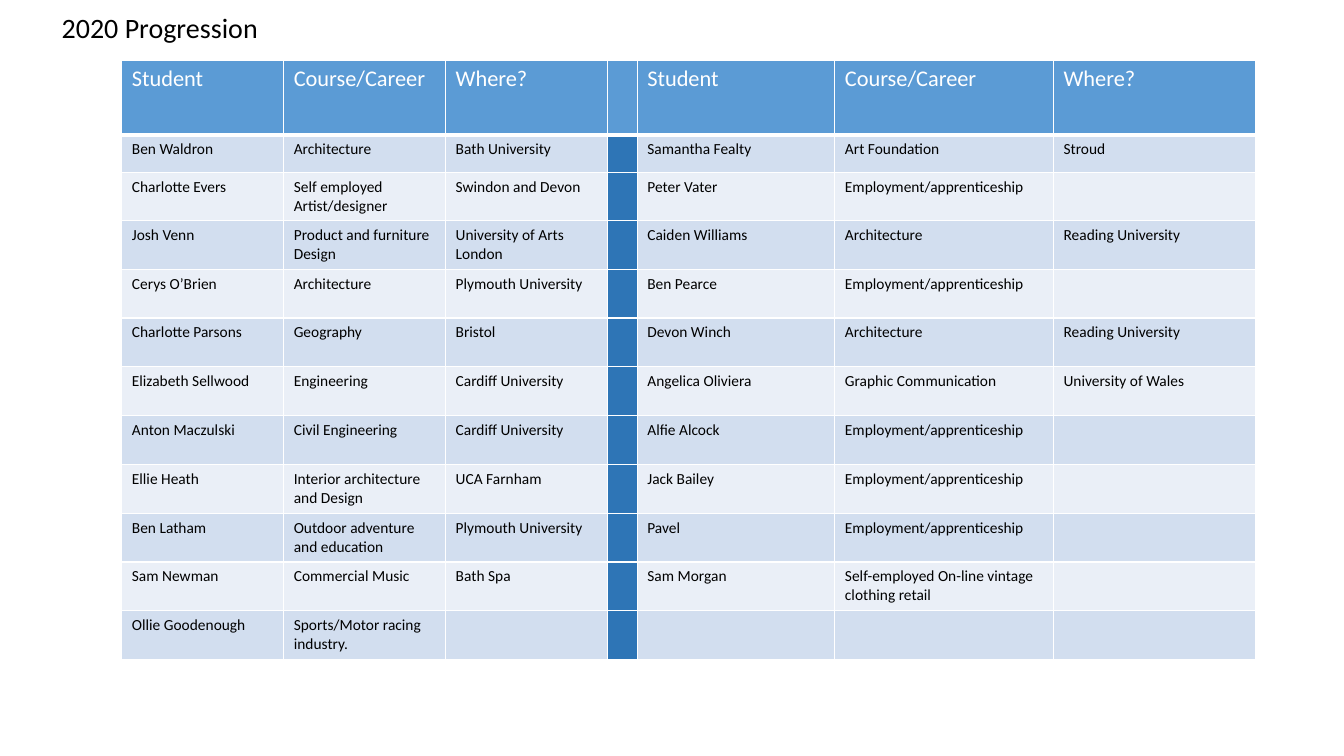
"""Build the 2020 student progression table slide."""
import pptx
import pptx.dml.color
import pptx.enum.text
import pptx.oxml.ns
import pptx.util
from lxml import etree

Cm, Pt = pptx.util.Cm, pptx.util.Pt
qn = pptx.oxml.ns.qn
RGB = pptx.dml.color.RGBColor.from_string

COLOURS = {
    "text": "000000",
    "white": "FFFFFF",
    "header": "5B9BD5",
    "divider": "2E75B6",
    "odd row": "D2DEEF",
    "even row": "EAEFF7",
}
HEADER_FONT = {"name": "Calibri", "size": Pt(16), "bold": False}
STUDENT_FONT = {"name": "Calibri", "size": Pt(11), "bold": False}
TITLE_FONT = {"name": "Calibri", "size": Pt(20), "bold": False}
TITLE_FRAME = {
    "vertical_anchor": pptx.enum.text.MSO_ANCHOR.MIDDLE,
    "auto_size": pptx.enum.text.MSO_AUTO_SIZE.NONE,
    "word_wrap": True,
}
TITLE_PARAGRAPH = {"alignment": pptx.enum.text.PP_ALIGN.LEFT, "line_spacing": 0.9}

HEADINGS = ("Student", "Course/Career", "Where?")
EMPLOYED = "Employment/apprenticeship"
LEFT_STUDENTS = [
    ("Ben Waldron", "Architecture", "Bath University"),
    ("Charlotte Evers", "Self employed Artist/designer", "Swindon and Devon"),
    ("Josh Venn", "Product and furniture Design", "University of Arts London"),
    ("Cerys O’Brien", "Architecture", "Plymouth University"),
    ("Charlotte Parsons", "Geography", "Bristol"),
    ("Elizabeth Sellwood", "Engineering", "Cardiff University"),
    ("Anton Maczulski", "Civil Engineering", "Cardiff University"),
    ("Ellie Heath", "Interior architecture and Design", "UCA Farnham"),
    ("Ben Latham", "Outdoor adventure and education", "Plymouth University"),
    ("Sam Newman", "Commercial Music", "Bath Spa"),
    ("Ollie Goodenough", "Sports/Motor racing industry.", ""),
]
RIGHT_STUDENTS = [
    ("Samantha Fealty", "Art Foundation", "Stroud"),
    ("Peter Vater", EMPLOYED, ""),
    ("Caiden Williams", "Architecture", "Reading University"),
    ("Ben Pearce", EMPLOYED, ""),
    ("Devon Winch", "Architecture", "Reading University"),
    ("Angelica Oliviera", "Graphic Communication", "University of Wales"),
    ("Alfie Alcock", EMPLOYED, ""),
    ("Jack Bailey", EMPLOYED, ""),
    ("Pavel", EMPLOYED, ""),
    ("Sam Morgan", "Self-employed On-line vintage clothing retail", ""),
    ("", "", ""),
]
COLUMN_WIDTHS = [4.08, 4.08, 4.08, 0.75, 4.98, 5.51, 5.1]
ROW_HEIGHTS = [1.88, 0.94, 1.14] + [1.23] * 9
DIVIDER_COLUMN = 3


def apply_format(target, values):
    """Set every attribute in values on target."""
    for attribute, value in values.items():
        setattr(target, attribute, value)


def add_border(cell, side, width):
    """Add a white border of the given width in points to one side of a cell."""
    border = etree.SubElement(cell._tc.get_or_add_tcPr(), qn(f"a:ln{side}"), w=str(Pt(width)))
    fill = etree.SubElement(border, qn("a:solidFill"))
    etree.SubElement(fill, qn("a:srgbClr"), val=COLOURS["white"])


presentation = pptx.Presentation()
presentation.slide_width = Cm(33.87)
presentation.slide_height = Cm(19.05)
slide = presentation.slides.add_slide(presentation.slide_layouts[5])

title = slide.shapes.title
apply_format(title, {"left": Cm(1.3), "top": Cm(0.18), "width": Cm(29.21), "height": Cm(1.14)})
title.text_frame.text = "2020 Progression"
apply_format(title.text_frame, TITLE_FRAME)
title_paragraph = title.text_frame.paragraphs[0]
apply_format(title_paragraph, TITLE_PARAGRAPH)
apply_format(title_paragraph.runs[0].font, TITLE_FONT)
title_paragraph.runs[0].font.color.rgb = RGB(COLOURS["text"])

progression = slide.shapes.add_table(
    len(ROW_HEIGHTS), len(COLUMN_WIDTHS), Cm(3.07), Cm(1.52),
    Cm(sum(COLUMN_WIDTHS)), Cm(sum(ROW_HEIGHTS)),
).table
for column, width in zip(progression.columns, COLUMN_WIDTHS):
    column.width = Cm(width)
for row, height in zip(progression.rows, ROW_HEIGHTS):
    row.height = Cm(height)

entries = [(*HEADINGS, "", *HEADINGS)]
entries += [(*left, "", *right) for left, right in zip(LEFT_STUDENTS, RIGHT_STUDENTS)]

for row_index, entry in enumerate(entries):
    is_header = row_index == 0
    font_format = HEADER_FONT if is_header else STUDENT_FONT
    text_colour = COLOURS["white" if is_header else "text"]
    band = "header" if is_header else ("odd row" if row_index % 2 else "even row")
    for column_index, text in enumerate(entry):
        cell = progression.cell(row_index, column_index)
        for side in "LRTB":
            header_edge = (is_header and side == "B") or (row_index == 1 and side == "T")
            add_border(cell, side, 3 if header_edge else 1)
        is_divider = column_index == DIVIDER_COLUMN and not is_header
        cell.fill.solid()
        cell.fill.fore_color.rgb = RGB(COLOURS["divider" if is_divider else band])
        paragraph = cell.text_frame.paragraphs[0]
        if text:
            run = paragraph.add_run()
            run.text = text
            apply_format(run.font, font_format)
            run.font.color.rgb = RGB(text_colour)
        else:
            etree.SubElement(paragraph._p, qn("a:endParaRPr"), sz="1100")

presentation.save("out.pptx")
